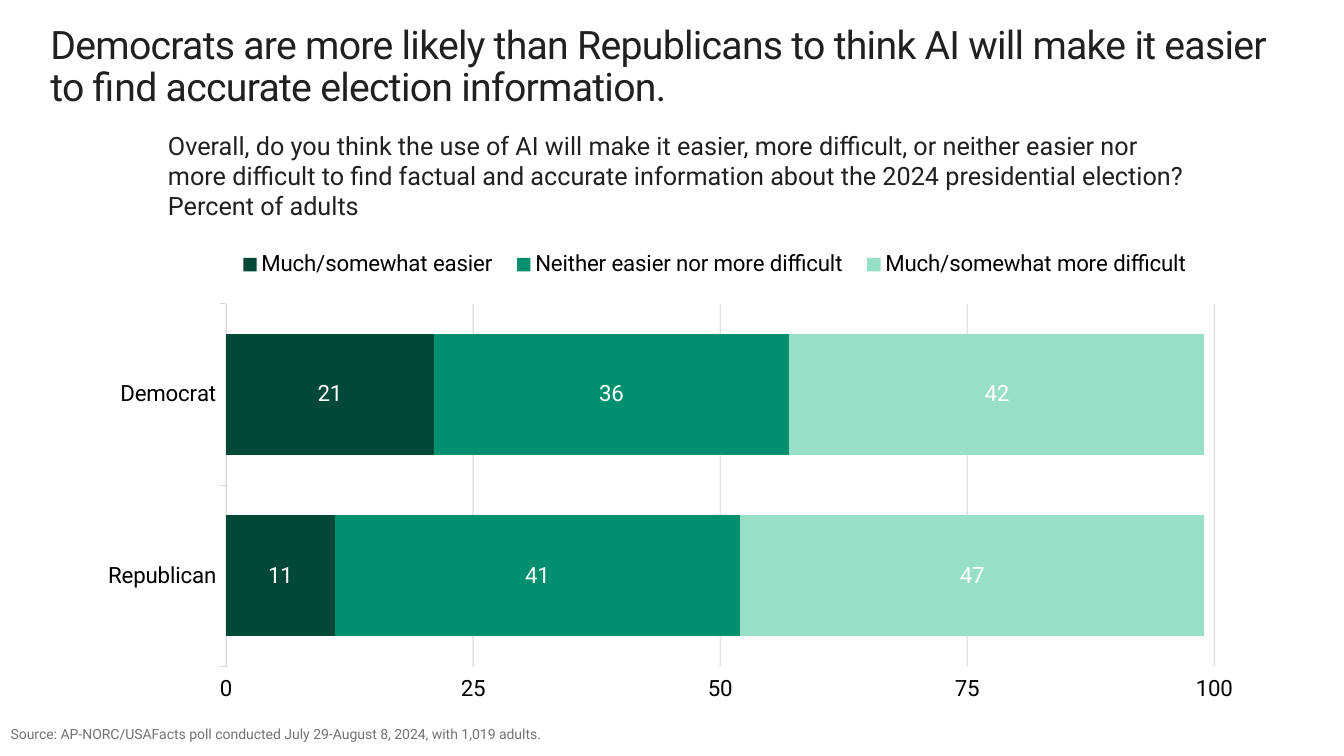
from dataclasses import dataclass

from lxml.etree import SubElement
from pptx import Presentation
from pptx.chart.chart import Chart
from pptx.chart.data import CategoryChartData
from pptx.dml.color import RGBColor
from pptx.enum.chart import (XL_CHART_TYPE, XL_LABEL_POSITION, XL_LEGEND_POSITION,
                             XL_TICK_LABEL_POSITION, XL_TICK_MARK)
from pptx.enum.text import MSO_ANCHOR
from pptx.oxml import parse_xml
from pptx.oxml.ns import nsdecls, qn
from pptx.slide import Slide
from pptx.text.text import Font
from pptx.util import Emu, Pt


@dataclass(frozen=True)
class Theme:
    font: str = "Roboto"
    ink: str = "202020"
    chart_ink: str = "000000"
    muted: str = "727373"
    label: str = "FFFFFF"
    axis: str = "D9D9D9"
    grid: str = "C7C7C7"
    title_size: int = 28
    question_size: int = 18
    chart_size: int = 16
    source_size: int = 10


@dataclass(frozen=True)
class Area:
    left: int
    top: int
    width: int
    height: int


@dataclass(frozen=True)
class TextBlock:
    area: Area
    lines: tuple[str, ...]
    size: int
    color: str
    inset: int = 10
    line_spacing: float = 1.0
    tracking: int = 0
    anchor: MSO_ANCHOR = MSO_ANCHOR.TOP


@dataclass(frozen=True)
class Answer:
    name: str
    values: tuple[int, ...]
    color: str


THEME = Theme()
PX = 9525  # EMU per px, 96 px to the inch

TEXTS = (
    TextBlock(Area(48, 24, 1185, 107),
              ("Democrats are more likely than Republicans to think AI will make it easier "
               "to find accurate election information.",),
              THEME.title_size, THEME.ink, inset=0, line_spacing=0.9, tracking=-50),
    TextBlock(Area(150, 124, 981, 140),
              ("Overall, do you think the use of AI will make it easier, more difficult, or "
               "neither easier nor more difficult to find factual and accurate information "
               "about the 2024 presidential election?",
               "Percent of adults"),
              THEME.question_size, THEME.ink),
    TextBlock(Area(0, 687, 985, 26),
              ("Source: AP-NORC/USAFacts poll conducted July 29-August 8, 2024, "
               "with 1,019 adults.",),
              THEME.source_size, THEME.muted, line_spacing=0.95, anchor=MSO_ANCHOR.MIDDLE),
)

CHART_AREA = Area(103, 210, 1075, 467)
PARTIES = ("Republican", "Democrat")
ANSWERS = (
    Answer("Much/somewhat easier", (11, 21), "004837"),
    Answer("Neither easier nor more difficult", (41, 36), "00906E"),
    Answer("Much/somewhat more difficult", (47, 42), "97DFC7"),
)


def place(area: Area) -> tuple[Emu, Emu, Emu, Emu]:
    return (Emu(area.left * PX), Emu(area.top * PX),
            Emu(area.width * PX), Emu(area.height * PX))


def style_font(font: Font, size: int, color: str) -> None:
    font.name = THEME.font
    font.size = Pt(size)
    font.bold = False
    font.color.rgb = RGBColor.from_string(color)


def add_text(page: Slide, block: TextBlock) -> None:
    box = page.shapes.add_textbox(*place(block.area))
    frame = box.text_frame
    frame.word_wrap = True
    frame.vertical_anchor = block.anchor
    frame.margin_left = Emu(block.inset * PX)
    frame.margin_top = frame.margin_right = frame.margin_bottom = 0
    frame.text = "\n".join(block.lines)
    for para in frame.paragraphs:
        para.line_spacing = block.line_spacing
        style_font(para.font, block.size, block.color)
        if block.tracking:
            for span in para.runs:
                span.font._element.set("spc", str(block.tracking))


def set_layout(parent, index: int, inner: bool, x: float, y: float, w: float, h: float) -> None:
    """Place a chart part by fractions of the chart area."""
    for old in parent.findall(qn("c:layout")):
        parent.remove(old)
    target = '<c:layoutTarget val="inner"/>' if inner else ""
    sizes = "".join(f'<c:{name} val="{value}"/>'
                    for name, value in (("x", x), ("y", y), ("w", w), ("h", h)))
    parent.insert(index, parse_xml(
        f'<c:layout {nsdecls("c")}><c:manualLayout>{target}<c:xMode val="edge"/>'
        f'<c:yMode val="edge"/>{sizes}</c:manualLayout></c:layout>'))


def style_axes(chart: Chart) -> None:
    parties, percent = chart.category_axis, chart.value_axis
    for axis in (parties, percent):
        style_font(axis.tick_labels.font, THEME.chart_size, THEME.chart_ink)
        axis.minor_tick_mark = XL_TICK_MARK.NONE
    parties.major_tick_mark = XL_TICK_MARK.OUTSIDE
    parties.format.line.width = Pt(0.75)
    parties.format.line.color.rgb = RGBColor.from_string(THEME.axis)

    percent.major_tick_mark = XL_TICK_MARK.NONE
    percent.tick_label_position = XL_TICK_LABEL_POSITION.LOW
    percent.minimum_scale, percent.maximum_scale, percent.major_unit = 0, 100, 25
    percent.format.line.fill.background()
    grid = percent.major_gridlines.format.line
    grid.width = Pt(1)
    grid.color.rgb = RGBColor.from_string(THEME.grid)
    color = grid._ln.find(".//" + qn("a:srgbClr"))
    SubElement(color, qn("a:alpha")).set("val", "50000")


def add_answer_chart(page: Slide) -> None:
    data = CategoryChartData(number_format="General")
    data.categories = PARTIES
    for answer in ANSWERS:
        data.add_series(answer.name, answer.values)
    chart = page.shapes.add_chart(
        XL_CHART_TYPE.BAR_STACKED, *place(CHART_AREA), data).chart
    style_font(chart.font, THEME.chart_size, THEME.chart_ink)
    chart.has_title = False
    style_axes(chart)

    # Bars and their values
    plot = chart.plots[0]
    plot.gap_width, plot.overlap = 50, 100
    plot.vary_by_categories = False
    for series, answer in zip(plot.series, ANSWERS):
        series.format.fill.solid()
        series.format.fill.fore_color.rgb = RGBColor.from_string(answer.color)
        labels = series.data_labels
        labels.show_value = True
        labels.position = XL_LABEL_POSITION.CENTER
        style_font(labels.font, THEME.chart_size, THEME.label)

    # Legend and plot placement
    chart.has_legend = True
    legend = chart.legend
    legend.position = XL_LEGEND_POSITION.TOP
    legend.include_in_layout = False
    style_font(legend.font, THEME.chart_size, THEME.chart_ink)
    set_layout(legend._element, 1, False, 0.1, 0.05, 0.87, 0.08)
    plot_area = chart._chartSpace.chart.plotArea
    set_layout(plot_area, 0, True, 0.1, 0.17, 0.88, 0.74)


def main() -> None:
    deck = Presentation()
    deck.slide_width, deck.slide_height = Emu(1280 * PX), Emu(720 * PX)
    page = deck.slides.add_slide(deck.slide_layouts[6])
    add_answer_chart(page)
    for block in TEXTS:
        add_text(page, block)
    deck.save("out.pptx")


if __name__ == "__main__":
    main()
